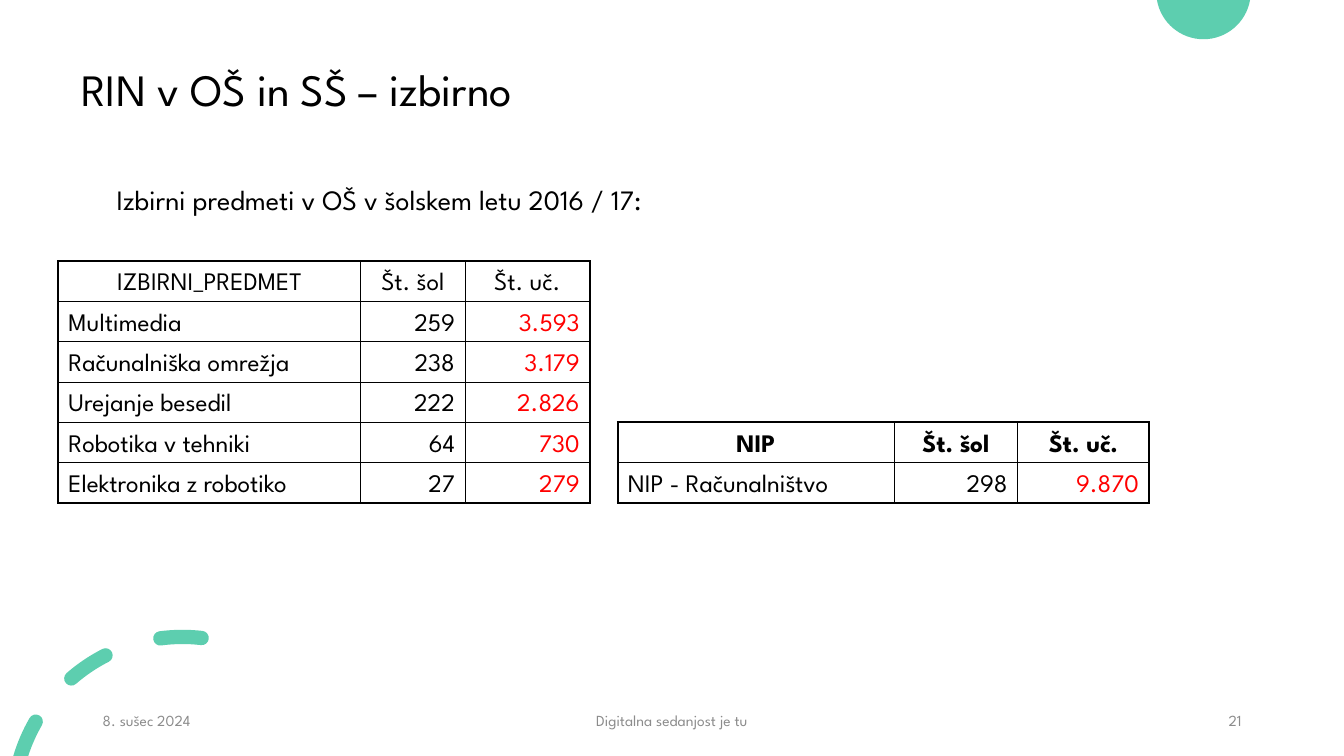
import dataclasses
import math

import lxml.etree
import pptx
import pptx.dml.color
import pptx.enum.text
import pptx.oxml.ns
import pptx.slide
import pptx.table
import pptx.text.text
import pptx.util

Cm = pptx.util.Cm
Pt = pptx.util.Pt
Align = pptx.enum.text.PP_ALIGN
Anchor = pptx.enum.text.MSO_ANCHOR
RGBColor = pptx.dml.color.RGBColor
qn = pptx.oxml.ns.qn

BLACK = RGBColor(0x00, 0x00, 0x00)
RED = RGBColor(0xFF, 0x00, 0x00)
GREY = RGBColor(0x8C, 0x8C, 0x8C)
MINT = RGBColor(0x5D, 0xCE, 0xAF)
FONT = "League Spartan"
SLIDE_WIDTH = 33.87
SLIDE_HEIGHT = 19.05
ROW_HEIGHT = 1.01
OUTER_BORDER = 1.5
INNER_BORDER = 0.75

Point = tuple[float, float]


@dataclasses.dataclass(frozen=True)
class Label:
    text: str
    left: float
    top: float
    width: float
    height: float
    size: float
    color: RGBColor = BLACK
    align: Align = Align.LEFT
    anchor: Anchor = Anchor.MIDDLE
    line_spacing: float | None = None


@dataclasses.dataclass(frozen=True)
class SubjectTable:
    left: float
    top: float
    columns: tuple[float, ...]
    rows: tuple[tuple[str, ...], ...]
    bold_header: bool = False


LABELS = (
    Label("8. sušec 2024", 2.34, 17.65, 7.62, 1.02, 11, GREY),
    Label("Digitalna sedanjost je tu", 11.22, 17.65, 11.43, 1.02, 11, GREY, Align.CENTER),
    Label("21", 23.92, 17.65, 7.62, 1.02, 11, GREY, Align.RIGHT),
    Label("RIN v OŠ in SŠ – izbirno", 1.8, 1.25, 26.14, 2.13, 32, line_spacing=0.9),
    Label("Izbirni predmeti v OŠ v šolskem letu 2016 / 17:", 2.69, 4.48, 23.47, 1.12, 20,
          anchor=Anchor.TOP),
)

TABLES = (
    SubjectTable(1.47, 6.58, (7.62, 2.63, 3.14), (
        ("IZBIRNI_PREDMET", "Št. šol", "Št. uč."),
        ("Multimedia", "259", "3.593"),
        ("Računalniška omrežja", "238", "3.179"),
        ("Urejanje besedil", "222", "2.826"),
        ("Robotika v tehniki", "64", "730"),
        ("Elektronika z robotiko", "27", "279"),
    )),
    SubjectTable(15.57, 10.64, (6.96, 3.12, 3.31), (
        ("NIP", "Št. šol", "Št. uč."),
        ("NIP - Računalništvo", "298", "9.870"),
    ), bold_header=True),
)

DISC_CENTER = (30.33, -0.2)
DISC_RADIUS = 1.19
DASH_CENTER = (4.6, 20.32)
DASH_RADIUS = 4.27
DASH_HALF_WIDTH = 0.18
DASH_OUTER = DASH_RADIUS + DASH_HALF_WIDTH
DASH_INNER = DASH_RADIUS - DASH_HALF_WIDTH


def on_circle(center: Point, radius: float, angle: float) -> Point:
    turn = math.radians(angle)
    return center[0] + radius * math.cos(turn), center[1] - radius * math.sin(turn)


def arc(center: Point, radius: float, start: float, end: float) -> list[Point]:
    pieces = math.ceil(abs(end - start) / 90)
    sweep = (end - start) / pieces
    reach = 4 / 3 * math.tan(math.radians(sweep) / 4)
    stretched = radius * math.hypot(1, reach)
    lean = math.degrees(math.atan(reach))
    points = [on_circle(center, radius, start)]
    for piece in range(pieces):
        first = start + piece * sweep
        last = first + sweep
        points += [on_circle(center, stretched, first + lean),
                   on_circle(center, stretched, last - lean),
                   on_circle(center, radius, last)]
    return points


def cap(angle: float, turn: float) -> list[Point]:
    center = on_circle(DASH_CENTER, DASH_RADIUS, angle)
    return arc(center, DASH_HALF_WIDTH, turn, turn + 180)[1:]


def rounded_dash(start: float, end: float) -> list[Point]:
    return (arc(DASH_CENTER, DASH_OUTER, start, end) + cap(end, end)
            + arc(DASH_CENTER, DASH_INNER, end, start)[1:] + cap(start, start + 180))


def cut_dash(start: float) -> list[Point]:
    outer_end, inner_end = (
        180 - math.degrees(math.asin((DASH_CENTER[1] - SLIDE_HEIGHT) / radius))
        for radius in (DASH_OUTER, DASH_INNER))
    outer = arc(DASH_CENTER, DASH_OUTER, start, outer_end)
    inner = arc(DASH_CENTER, DASH_INNER, inner_end, start)
    edge = [outer[-1], inner[0], inner[0]]
    return outer + edge + inner[1:] + cap(start, start + 180)


def add_ornament(page: pptx.slide.Slide, contours: list[list[Point]]) -> None:
    outlines = [[(Cm(x), Cm(y)) for x, y in contour] for contour in contours]
    builder = page.shapes.build_freeform(*outlines[0][0])
    for number, outline in enumerate(outlines):
        if number:
            builder.move_to(*outline[0])
        builder.add_line_segments(outline[1:], close=True)
    shape = builder.convert_to_shape()
    segments = list(shape._element.iter(qn("a:lnTo")))
    for index in range(0, len(segments), 3):
        curve = lxml.etree.Element(qn("a:cubicBezTo"))
        segments[index].addprevious(curve)
        for segment in segments[index:index + 3]:
            curve.append(segment[0])
            segment.getparent().remove(segment)
    shape.shadow.inherit = False
    shape.fill.solid()
    shape.fill.fore_color.rgb = MINT
    shape.line.fill.background()


def add_span(para: pptx.text.text._Paragraph, text: str, size: float, color: RGBColor,
             bold: bool = False) -> None:
    span = para.add_run()
    span.text = text
    span.font.name = FONT
    span.font.size = Pt(size)
    span.font.bold = bold
    span.font.color.rgb = color


def add_label(page: pptx.slide.Slide, label: Label) -> None:
    box = page.shapes.add_textbox(Cm(label.left), Cm(label.top), Cm(label.width),
                                  Cm(label.height))
    frame = box.text_frame
    frame.word_wrap = True
    frame.vertical_anchor = label.anchor
    para = frame.paragraphs[0]
    para.alignment = label.align
    para.line_spacing = label.line_spacing
    add_span(para, label.text, label.size, label.color)


def set_borders(cell: pptx.table._Cell, outer_sides: dict[str, bool]) -> None:
    properties = cell._tc.get_or_add_tcPr()
    for position, (side, outer) in enumerate(outer_sides.items()):
        width = Pt(OUTER_BORDER if outer else INNER_BORDER)
        line = lxml.etree.Element(qn(f"a:ln{side}"), w=str(width))
        fill = lxml.etree.SubElement(line, qn("a:solidFill"))
        lxml.etree.SubElement(fill, qn("a:srgbClr"), val=str(BLACK))
        properties.insert(position, line)


def add_subject_table(page: pptx.slide.Slide, subject: SubjectTable) -> None:
    last_row, last_column = len(subject.rows) - 1, len(subject.columns) - 1
    table = page.shapes.add_table(
        len(subject.rows), len(subject.columns), Cm(subject.left), Cm(subject.top),
        Cm(sum(subject.columns)), Cm(ROW_HEIGHT * len(subject.rows))).table
    table.first_row = False
    table.horz_banding = False
    for column, width in zip(table.columns, subject.columns):
        column.width = Cm(width)
    for row, texts in enumerate(subject.rows):
        table.rows[row].height = Cm(ROW_HEIGHT)
        for column, text in enumerate(texts):
            header = row == 0
            cell = table.cell(row, column)
            cell.fill.background()
            cell.vertical_anchor = Anchor.BOTTOM
            set_borders(cell, {"L": column == 0, "R": column == last_column,
                               "T": header, "B": row == last_row})
            para = cell.text_frame.paragraphs[0]
            para.alignment = (Align.CENTER if header
                              else Align.LEFT if column == 0 else Align.RIGHT)
            color = RED if column == last_column and not header else BLACK
            add_span(para, text, 18, color, header and subject.bold_header)


def main() -> None:
    deck = pptx.Presentation()
    deck.slide_width, deck.slide_height = Cm(SLIDE_WIDTH), Cm(SLIDE_HEIGHT)
    page = deck.slides.add_slide(deck.slide_layouts[6])
    add_ornament(page, [arc(DISC_CENTER, DISC_RADIUS, 189.68, 350.32)])
    add_ornament(page, [cut_dash(150), rounded_dash(117, 131), rounded_dash(83.5, 97.5)])
    for label in LABELS:
        add_label(page, label)
    for subject in TABLES:
        add_subject_table(page, subject)
    deck.save("out.pptx")


if __name__ == "__main__":
    main()
